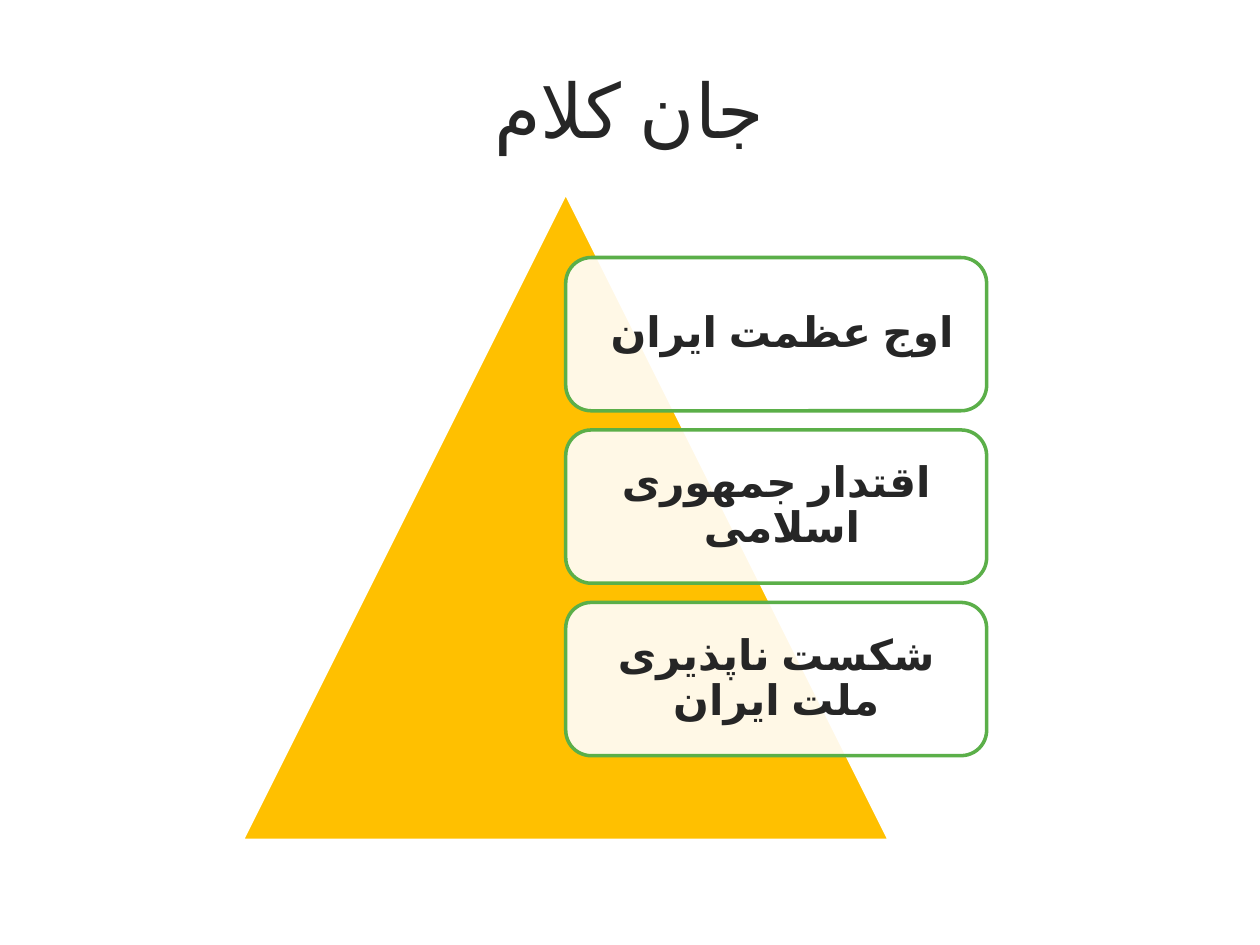
"""Build a slide with a title and a pyramid list of three cards."""
from dataclasses import dataclass

from lxml.etree import SubElement
from pptx import Presentation
from pptx.dml.color import RGBColor as RGB
from pptx.enum.lang import MSO_LANGUAGE_ID as LANG
from pptx.enum.shapes import MSO_SHAPE as SHAPE
from pptx.enum.text import MSO_ANCHOR as ANCHOR, MSO_AUTO_SIZE as AUTO, PP_ALIGN as ALIGN
from pptx.oxml.ns import qn
from pptx.util import Inches, Pt


@dataclass(frozen=True)
class Theme:
    font: str = "Roboto"
    ink: RGB = RGB(0x26, 0x26, 0x26)
    pyramid: RGB = RGB(0xFF, 0xC0, 0x00)
    edge: RGB = RGB(0x5B, 0xAF, 0x49)
    white: RGB = RGB(0xFF, 0xFF, 0xFF)
    title: float = 43
    body: float = 24
    line: float = 2
    card_alpha: int = 90


THEME = Theme()
TITLE = "جان کلام"
CARDS = ["اوج عظمت ایران ", "اقتدار جمهوری اسلامی ", "شکست ناپذیری ملت ایران"]
WIDTH, HEIGHT = 10, 7.5
TITLE_BOX = (0.42, 0.5, 9.15, 0.72)
LEFT, TOP, SIDE = 1.92, 1.53, 5.14
CARD_W, CARD_H = SIDE * 0.65, SIDE * 0.2367
PITCH = CARD_H * 9 / 8


def write(sp, text, size, inset, bold=False):
    tf = sp.text_frame
    tf.text = text
    tf.word_wrap, tf.auto_size, tf.vertical_anchor = True, AUTO.NONE, ANCHOR.MIDDLE
    tf.margin_left = tf.margin_top = tf.margin_right = tf.margin_bottom = Inches(inset)
    p = tf.paragraphs[0]
    p.alignment = ALIGN.CENTER
    font = p.runs[0].font
    font.name, font.size, font.bold = THEME.font, Pt(size), bold
    font.color.rgb = THEME.ink
    font.language_id = LANG.FARSI
    return p


def add_shape(group, kind, box, fill, line):
    sp = group.shapes.add_shape(kind, *map(Inches, box))
    sp.shadow.inherit = False
    sp.fill.solid()
    sp.fill.fore_color.rgb = fill
    sp.line.color.rgb = line
    sp.line.width = Pt(THEME.line)
    return sp


def add_card(group, row, text):
    box = (LEFT + SIDE / 2, TOP + SIDE / 10 + row * PITCH, CARD_W, CARD_H)
    sp = add_shape(group, SHAPE.ROUNDED_RECTANGLE, box, THEME.white, THEME.edge)
    color = sp.element.spPr.find(qn("a:solidFill")).find(qn("a:srgbClr"))
    SubElement(color, qn("a:alpha"), val=str(THEME.card_alpha * 1000))
    p = write(sp, text, THEME.body, 0.1, bold=True)
    p.line_spacing = 0.9
    p._p.get_or_add_pPr().set("rtl", "1")


def main():
    prs = Presentation()
    prs.slide_width, prs.slide_height = Inches(WIDTH), Inches(HEIGHT)
    slide = prs.slides.add_slide(prs.slide_layouts[5])
    title = slide.shapes.title
    title.left, title.top, title.width, title.height = map(Inches, TITLE_BOX)
    write(title, TITLE, THEME.title, 0)
    group = slide.shapes.add_group_shape()
    add_shape(group, SHAPE.ISOSCELES_TRIANGLE, (LEFT, TOP, SIDE, SIDE),
              THEME.pyramid, THEME.white)
    for row, text in enumerate(CARDS):
        add_card(group, row, text)
    prs.save("out.pptx")


if __name__ == "__main__":
    main()
